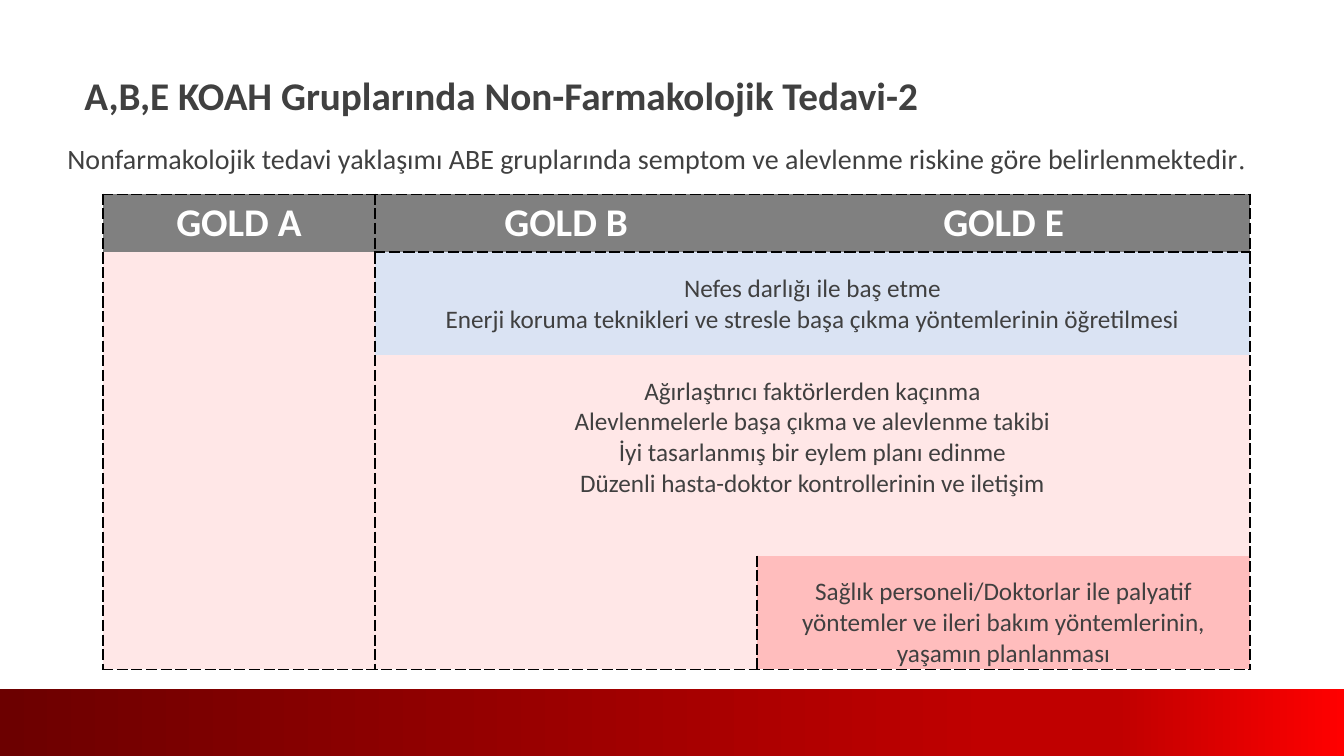
from copy import deepcopy

from lxml.etree import SubElement
from pptx import Presentation
from pptx.dml.color import RGBColor
from pptx.enum.shapes import MSO_SHAPE
from pptx.enum.text import MSO_ANCHOR, PP_ALIGN
from pptx.oxml.ns import qn
from pptx.util import Cm, Pt

BLACK = RGBColor(0x00, 0x00, 0x00)
WHITE = RGBColor(0xFF, 0xFF, 0xFF)
DARK = RGBColor(0x40, 0x40, 0x40)
GRAY = RGBColor(0x80, 0x80, 0x80)
PINK = RGBColor(0xFF, 0xE7, 0xE7)
BLUE = RGBColor(0xDA, 0xE3, 0xF3)
ROSE = RGBColor(0xFF, 0xBD, 0xBD)
MAROON = RGBColor(0x6C, 0x00, 0x00)
CRIMSON = RGBColor(0xC0, 0x00, 0x00)
RED = RGBColor(0xFF, 0x00, 0x00)

TITLE = {"name": "Calibri", "size": Pt(28), "bold": True, "color": DARK}
INTRO = {"name": "Calibri", "size": Pt(20), "bold": False, "color": DARK}
STOP = {**INTRO, "name": "Times New Roman"}
HEADER = {**TITLE, "color": WHITE}
BODY = {**INTRO, "size": Pt(18)}

COLUMNS = (6.86, 9.63, 12.42)
ROWS = (1.46, 2.59, 5.05, 2.87)
BAND = ((0, MAROON), (0.74, CRIMSON), (0.83, CRIMSON), (1, RED))

BREATHING = (
    "Nefes darlığı ile baş etme",
    "Enerji koruma teknikleri ve stresle başa çıkma yöntemlerinin öğretilmesi",
)
ACTION_PLAN = (
    "Ağırlaştırıcı faktörlerden kaçınma",
    "Alevlenmelerle başa çıkma ve alevlenme takibi",
    "İyi tasarlanmış bir eylem planı edinme",
    "Düzenli hasta-doktor kontrollerinin ve iletişim",
)
PALLIATIVE = (
    "Sağlık personeli/Doktorlar ile palyatif yöntemler ve ileri bakım "
    "yöntemlerinin, yaşamın planlanması",
)
CELLS = (
    ((("GOLD A",), GRAY, "LRT"), (("GOLD B",), GRAY, "LTB"), (("GOLD E",), GRAY, "RTB")),
    (((), PINK, "LR"), (BREATHING, BLUE, "LRT"), ((), BLUE, "RT")),
    (((), PINK, "LR"), (ACTION_PLAN, PINK, "LR"), ((), PINK, "R")),
    (((), PINK, "LRB"), ((), PINK, "LRB"), (PALLIATIVE, ROSE, "LRB")),
)


def add_run(p, text, fmt):
    """Add a run of text in the given format."""
    r = p.add_run()
    r.text = text
    for key, value in fmt.items():
        if key == "color":
            r.font.color.rgb = value
        else:
            setattr(r.font, key, value)


def add_text(s, left, top, width, height, runs, wrap=True):
    """Add a one-paragraph text box made of (text, format) runs."""
    tf = s.shapes.add_textbox(Cm(left), Cm(top), Cm(width), Cm(height)).text_frame
    tf.word_wrap = wrap
    for text, fmt in runs:
        add_run(tf.paragraphs[0], text, fmt)


def set_borders(cell, dashed):
    """Dash the named sides of a cell and clear the others."""
    tcPr = cell._tc.get_or_add_tcPr()
    for side in "LRTB":
        ln = SubElement(tcPr, qn(f"a:ln{side}"), w=str(Pt(1.5)))
        if side in dashed:
            fill = SubElement(ln, qn("a:solidFill"))
            SubElement(fill, qn("a:srgbClr"), val=str(BLACK))
            SubElement(ln, qn("a:prstDash"), val="dash")
        else:
            SubElement(ln, qn("a:noFill"))


def fill_cell(cell, lines, color, dashed, header):
    """Set the borders, fill, margins and centred lines of a cell."""
    set_borders(cell, dashed)
    cell.fill.solid()
    cell.fill.fore_color.rgb = color
    margins = {
        "margin_left": Cm(0.13),
        "margin_right": Cm(0.13),
        "margin_top": Cm(0.05 if header else 0.53),
        "margin_bottom": Cm(0.05),
        "vertical_anchor": MSO_ANCHOR.MIDDLE if header else MSO_ANCHOR.TOP,
    }
    for key, value in margins.items():
        setattr(cell, key, value)
    tf = cell.text_frame
    for i, line in enumerate(lines):
        p = tf.add_paragraph() if i else tf.paragraphs[0]
        p.alignment = PP_ALIGN.CENTER
        add_run(p, line, HEADER if header else BODY)


def add_treatment_table(s, left, top):
    """Add the table of treatments by GOLD group."""
    table = s.shapes.add_table(
        len(ROWS), len(COLUMNS), Cm(left), Cm(top), Cm(sum(COLUMNS)), Cm(sum(ROWS))
    ).table
    for column, width in zip(table.columns, COLUMNS):
        column.width = Cm(width)
    for row, height in zip(table.rows, ROWS):
        row.height = Cm(height)
    for i, row in enumerate(CELLS):
        for j, (lines, color, dashed) in enumerate(row):
            fill_cell(table.cell(i, j), lines, color, dashed, header=i == 0)
    for i in (1, 2):
        table.cell(i, 1).merge(table.cell(i, 2))


def add_band(s, top, width, height):
    """Add the red gradient band along the foot of the slide."""
    sp = s.shapes.add_shape(MSO_SHAPE.RECTANGLE, 0, Cm(top), Cm(width), Cm(height))
    sp.shadow.inherit = False
    sp.line.fill.background()
    sp.fill.gradient()
    sp.fill.gradient_angle = 0
    stops = sp._element.spPr.find(".//" + qn("a:gsLst"))
    while len(stops) < len(BAND):
        stops.append(deepcopy(stops[0]))
    for stop, (position, color) in zip(sp.fill.gradient_stops, BAND):
        stop.position = position
        stop.color.rgb = color


def main():
    """Build and save the slide."""
    prs = Presentation()
    prs.slide_width, prs.slide_height = Cm(33.87), Cm(19.05)
    s = prs.slides.add_slide(prs.slide_layouts[6])
    title = "A,B,E KOAH Gruplarında Non-Farmakolojik Tedavi-2"
    intro = (
        "Nonfarmakolojik tedavi yaklaşımı ABE gruplarında semptom ve "
        "alevlenme riskine göre belirlenmektedir"
    )
    add_text(s, 1.88, 1.68, 25.4, 1.45, [(title, TITLE)])
    add_text(s, 1.45, 3.45, 30.96, 1.12, [(intro, INTRO), (".", STOP)], wrap=False)
    add_treatment_table(s, 2.59, 4.9)
    add_band(s, 17.37, 33.87, 1.68)
    prs.save("out.pptx")


if __name__ == "__main__":
    main()
